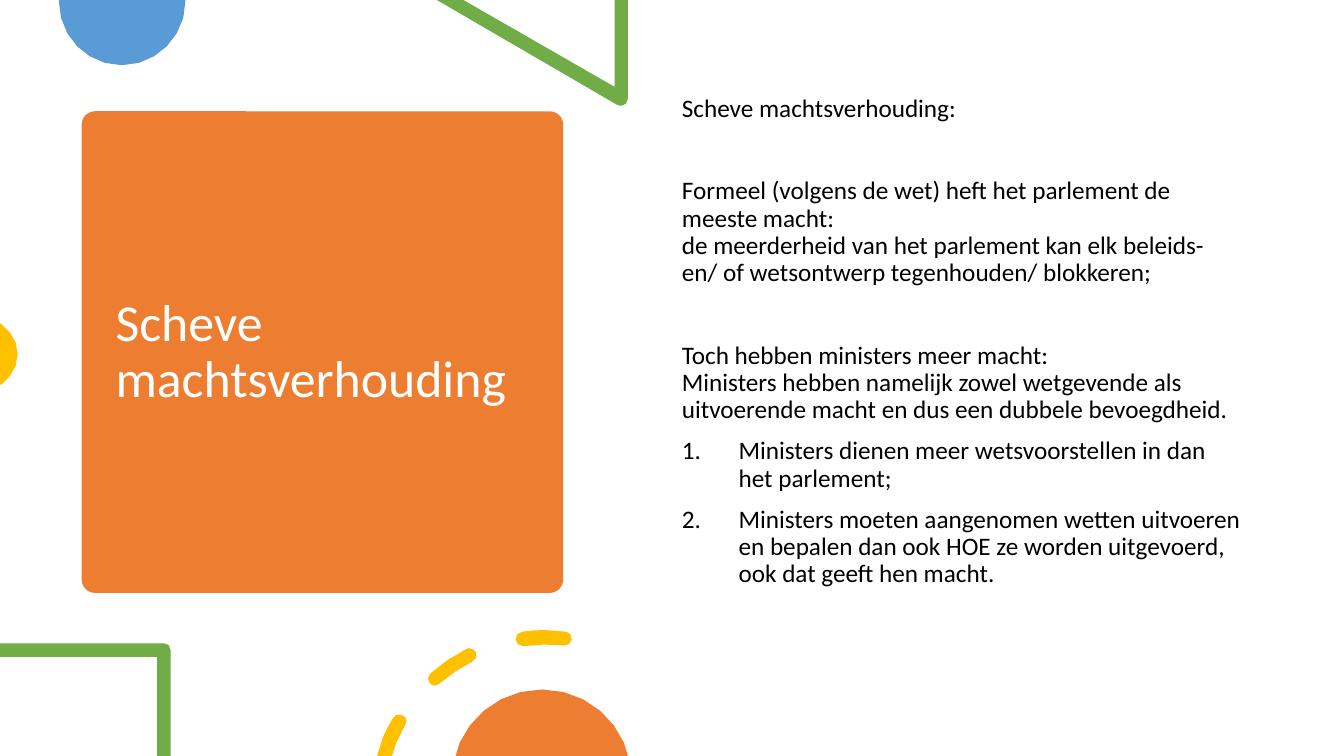
from math import ceil, hypot, sqrt
from lxml.etree import SubElement
from pptx import Presentation
from pptx.dml.color import RGBColor
from pptx.enum.shapes import MSO_SHAPE
from pptx.enum.text import MSO_ANCHOR
from pptx.oxml.ns import qn
from pptx.util import Pt

ORANGE, BLUE, GREEN, YELLOW = "ED7D31", "5B9BD5", "70AD47", "FFC000"
CURVE_TOLERANCE = 0.5

presentation = Presentation()
presentation.slide_width, presentation.slide_height = Pt(960), Pt(540)
slide = presentation.slides.add_slide(presentation.slide_layouts[6])


def paint(shape, color):
    shape.shadow.inherit = False
    shape.fill.solid()
    shape.fill.fore_color.rgb = RGBColor.from_string(color)
    shape.line.fill.background()


def write(paragraph, text, size=18, color="000000", space_before=0, numbered=False):
    paragraph.text = text
    paragraph.line_spacing = 0.9
    paragraph.space_before = Pt(space_before)
    for run in paragraph.runs:
        run.font.size = Pt(size)
        run.font.name = "Calibri"
        run.font.color.rgb = RGBColor.from_string(color)
    if numbered:
        properties = paragraph._p.get_or_add_pPr()
        properties.set("marL", str(Pt(40.5)))
        properties.set("indent", str(-Pt(40.5)))
        SubElement(properties, qn("a:buAutoNum"), type="arabicPeriod")


# Title card
card = slide.shapes.add_shape(MSO_SHAPE.ROUNDED_RECTANGLE, Pt(58.3), Pt(79.5), Pt(344), Pt(344))
card.adjustments[0] = 0.028
paint(card, ORANGE)

title = slide.shapes.add_textbox(Pt(75.5), Pt(87.8), Pt(310.3), Pt(328.3))
title.text_frame.word_wrap = True
title.text_frame.vertical_anchor = MSO_ANCHOR.MIDDLE
write(title.text_frame.paragraphs[0], "Scheve machtsverhouding", size=37, color="FFFFFF")

# Decorations: each contour is a list of corners (x, y)
# and Bézier curves (control, control, end)
decorations = [
    # Circle at the top
    (BLUE, [[(132.5, 0), (42, 0), (42, 0.7), (42, 26, 62, 46.6, 87, 46.6),
             (112, 46.6, 132.5, 26, 132.5, 0.7)]]),
    # Triangle at the top
    (GREEN, [[(448.5, 0), (439, 0), (439, 62), (331, 0), (312, 0), (441, 75),
              (442, 75.5, 443, 75.6, 443.5, 75.6), (446.5, 75.6, 448.5, 73.5, 448.5, 70.5)]]),
    # Circle at the left edge
    (YELLOW, [[(0, 231), (0, 275), (1.4, 274.3), (8, 269, 12.6, 262, 12.6, 253),
               (12.6, 244, 8, 237, 1.4, 232)]]),
    # Square frame at the bottom
    (GREEN, [[(117.4, 459.5), (0, 459.5), (0, 469.3), (112.3, 469.3), (112.3, 540),
              (121.8, 540), (121.8, 464.3), (121.8, 461.5, 119.8, 459.5, 117.4, 459.5)]]),
    # Dashed ring
    (YELLOW, [
        [(285.8, 510.5), (283.5, 510, 282, 511, 280.8, 512.8),
         (278, 517, 275.7, 521.7, 273.6, 526.5), (269.3, 540), (280, 540), (283, 530.8),
         (285, 526.3, 287, 522, 289.5, 517.5), (291.3, 515, 290.3, 512, 287.5, 511),
         (287, 510.7, 286.5, 510.5, 285.8, 510.5)],
        [(334.8, 463), (334.5, 463, 334, 463.2, 333.3, 463.5),
         (324, 468, 315.4, 474, 307.5, 481), (305.2, 482.7, 305, 486, 306.8, 487.7),
         (307.7, 489, 308.9, 489.7, 310.3, 489.7), (311.8, 489.7, 313, 489, 314, 488.2),
         (321, 482.2, 329, 476.8, 337.5, 472.5), (340.3, 471, 341.3, 468.3, 340, 466),
         (339, 464, 337, 463, 334.8, 463)],
        [(388.8, 450), (383, 450, 378, 450.6, 373, 451.2),
         (370, 451.5, 368, 454, 368.4, 457), (368.7, 459.7, 371, 461.5, 373.7, 461.5),
         (374.4, 461.5), (384, 460.2, 393.5, 460.1, 403, 461),
         (405.5, 461.3, 408, 459.5, 408.4, 457), (408.7, 454, 407, 451.6, 404.4, 451.2),
         (399, 450.4, 394, 450, 388.8, 450)],
    ]),
    # Dome inside the ring
    (ORANGE, [[(387.2, 492.5), (360.7, 492.5, 338.4, 508.3, 328.3, 530.6), (325.5, 540),
               (448.5, 540), (445.7, 530.6), (436, 508.3, 413.5, 492.5, 387.2, 492.5)]]),
]
for color, contours in decorations:
    builder = None
    for contour in contours:
        points = [contour[0]]
        for segment in contour[1:]:
            if len(segment) == 2:
                points.append(segment)
                continue
            x0, y0 = points[-1]
            x1, y1, x2, y2, x3, y3 = segment
            # The more a curve bends, the more steps it gets
            bend = max(hypot(x0 - 2 * x1 + x2, y0 - 2 * y1 + y2),
                       hypot(x1 - 2 * x2 + x3, y1 - 2 * y2 + y3))
            steps = max(1, ceil(sqrt(0.75 * bend / CURVE_TOLERANCE)))
            for step in range(1, steps + 1):
                t = step / steps
                a, b, c, d = (1 - t) ** 3, 3 * t * (1 - t) ** 2, 3 * t * t * (1 - t), t ** 3
                points.append((a * x0 + b * x1 + c * x2 + d * x3,
                               a * y0 + b * y1 + c * y2 + d * y3))
        if points[-1] == points[0]:
            points.pop()
        points = [(Pt(x), Pt(y)) for x, y in points]
        if builder is None:
            builder = slide.shapes.build_freeform(*points[0])
        else:
            builder.move_to(*points[0])
        builder.add_line_segments(points[1:], close=True)
    paint(builder.convert_to_shape(), color)

# Body text: (text, space before, numbered)
body = slide.shapes.add_textbox(Pt(480), Pt(64.8), Pt(414), Pt(385.2))
body.text_frame.word_wrap = True
statements = [
    ("Scheve machtsverhouding:", 0, False),
    ("Formeel (volgens de wet) heft het parlement de meeste macht:\n"
     "de meerderheid van het parlement kan elk beleids- en/ of wetsontwerp "
     "tegenhouden/ blokkeren;", 39.5, False),
    ("Toch hebben ministers meer macht:\n"
     "Ministers hebben namelijk zowel wetgevende als uitvoerende macht en dus "
     "een dubbele bevoegdheid.", 39.5, False),
    ("Ministers dienen meer wetsvoorstellen in dan het parlement;", 10, True),
    ("Ministers moeten aangenomen wetten uitvoeren en bepalen dan ook HOE ze "
     "worden uitgevoerd, ook dat geeft hen macht.", 10, True),
]
for index, (text, space_before, numbered) in enumerate(statements):
    paragraph = body.text_frame.add_paragraph() if index else body.text_frame.paragraphs[0]
    write(paragraph, text, space_before=space_before, numbered=numbered)

presentation.save("out.pptx")
